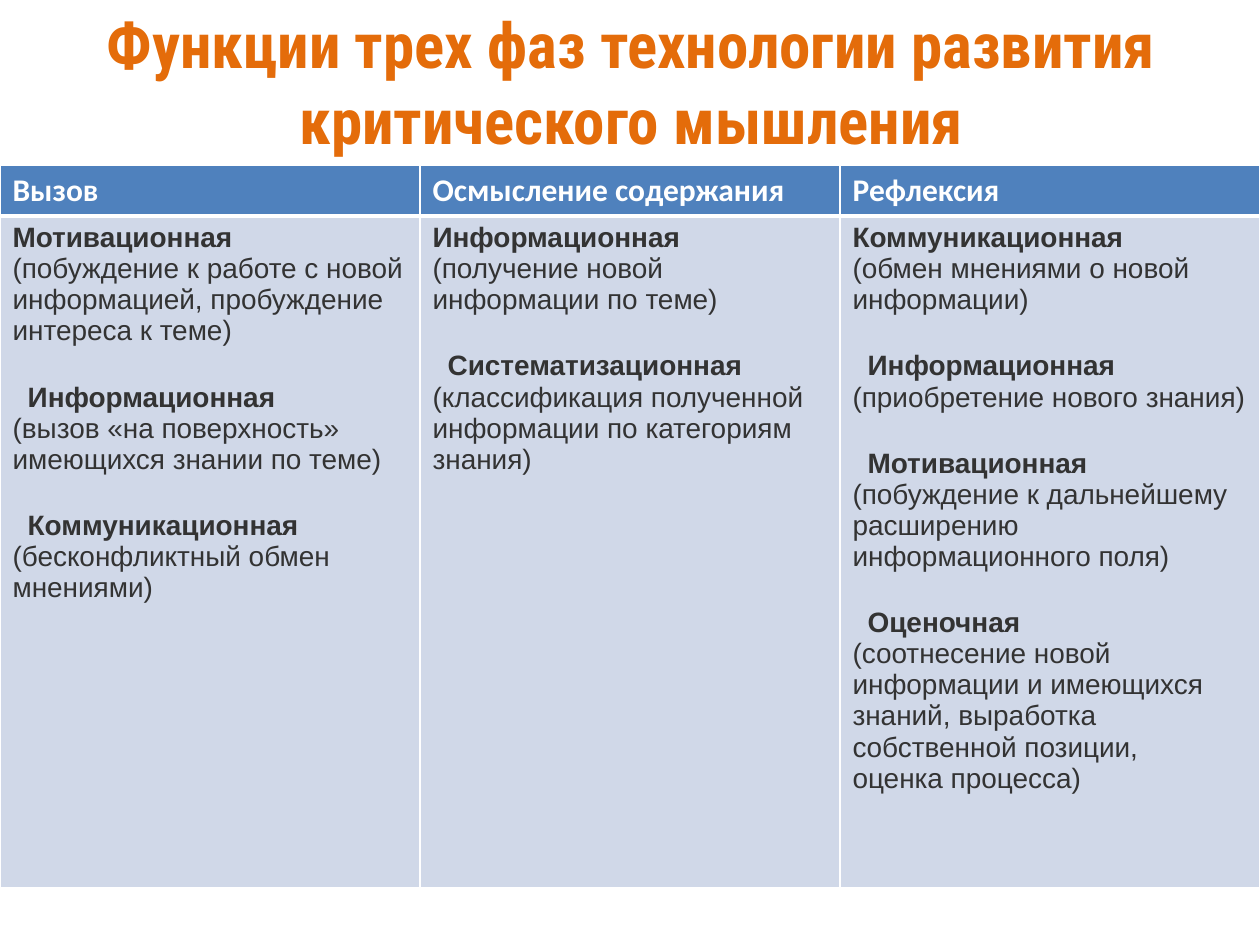
from typing import NamedTuple

from lxml.etree import SubElement
from pptx import Presentation
from pptx.dml.color import RGBColor
from pptx.enum.text import MSO_ANCHOR, PP_ALIGN
from pptx.oxml.ns import qn
from pptx.util import Inches, Pt

ORANGE = RGBColor(0xE4, 0x6C, 0x0A)
BLUE = RGBColor(0x4F, 0x81, 0xBD)
PALE_BLUE = RGBColor(0xD0, 0xD8, 0xE8)
WHITE = RGBColor(0xFF, 0xFF, 0xFF)
DARK_GREY = RGBColor(0x33, 0x33, 0x33)

TITLE_FONT = {"name": "Roboto Condensed", "size": Pt(36), "bold": True}
HEADER_FONT = {"name": "Calibri", "size": Pt(18), "bold": True}
FUNCTION_FONT = {"name": "Arial", "size": Pt(16), "bold": True}
DETAIL_FONT = {**FUNCTION_FONT, "bold": False}

HEADER_BORDERS = {"a:lnL": 1, "a:lnR": 1, "a:lnT": 1, "a:lnB": 3}
BODY_BORDERS = {"a:lnL": 1, "a:lnR": 1, "a:lnT": 3, "a:lnB": 1}


class Function(NamedTuple):
    name: str
    detail: str


class Phase(NamedTuple):
    name: str
    functions: list[Function]


PHASES = [
    Phase("Вызов", [
        Function("Мотивационная",
                 "(побуждение к работе с новой информацией, пробуждение интереса к теме)"),
        Function("Информационная", "(вызов «на поверхность» имеющихся знании по теме)"),
        Function("Коммуникационная", "(бесконфликтный обмен мнениями)"),
    ]),
    Phase("Осмысление содержания", [
        Function("Информационная", "(получение новой информации по теме)"),
        Function("Систематизационная",
                 "(классификация полученной информации по категориям знания)"),
    ]),
    Phase("Рефлексия", [
        Function("Коммуникационная", "(обмен мнениями о новой информации)"),
        Function("Информационная", "(приобретение нового знания)"),
        Function("Мотивационная",
                 "(побуждение к дальнейшему расширению информационного поля)"),
        Function("Оценочная",
                 "(соотнесение новой информации и имеющихся знаний, выработка "
                 "собственной позиции,\vоценка процесса)"),
    ]),
]


def write(paragraph, text: str, font_format: dict, color: RGBColor) -> None:
    paragraph.text = text
    for run in paragraph.runs:
        for attribute, value in font_format.items():
            setattr(run.font, attribute, value)
        run.font.color.rgb = color


def style_cell(cell, fill: RGBColor, borders: dict[str, int]) -> None:
    properties = cell._tc.get_or_add_tcPr()
    for side, width in borders.items():
        line = SubElement(properties, qn(side), w=str(Pt(width)))
        SubElement(SubElement(line, qn("a:solidFill")), qn("a:srgbClr"), val=str(WHITE))
    cell.fill.solid()
    cell.fill.fore_color.rgb = fill


def list_functions(frame, functions: list[Function]) -> None:
    for index, function in enumerate(functions):
        heading = frame.add_paragraph() if index else frame.paragraphs[0]
        write(heading, function.name, FUNCTION_FONT, DARK_GREY)
        if index:
            heading.space_before = Pt(20)
            heading._p.get_or_add_pPr().set("indent", str(Inches(0.12)))
        write(frame.add_paragraph(), function.detail, DETAIL_FONT, DARK_GREY)


def main() -> None:
    deck = Presentation()
    deck.slide_width, deck.slide_height = Inches(10), Inches(7.5)
    slide = deck.slides.add_slide(deck.slide_layouts[5])

    title = slide.shapes.title
    title.left, title.top = Inches(0.51), Inches(0.02)
    title.width, title.height = Inches(9), Inches(1.25)
    title.text_frame.vertical_anchor = MSO_ANCHOR.MIDDLE
    heading = title.text_frame.paragraphs[0]
    write(heading, "Функции трех фаз технологии развития критического мышления",
          TITLE_FONT, ORANGE)
    heading.alignment = PP_ALIGN.CENTER

    table = slide.shapes.add_table(2, len(PHASES), Inches(0), Inches(1.31),
                                   Inches(10), Inches(5.72)).table
    table.rows[0].height, table.rows[1].height = Inches(0.39), Inches(5.33)
    for column, phase in enumerate(PHASES):
        header, body = table.cell(0, column), table.cell(1, column)
        style_cell(header, BLUE, HEADER_BORDERS)
        style_cell(body, PALE_BLUE, BODY_BORDERS)
        write(header.text_frame.paragraphs[0], phase.name, HEADER_FONT, WHITE)
        list_functions(body.text_frame, phase.functions)

    deck.save("out.pptx")


if __name__ == "__main__":
    main()
